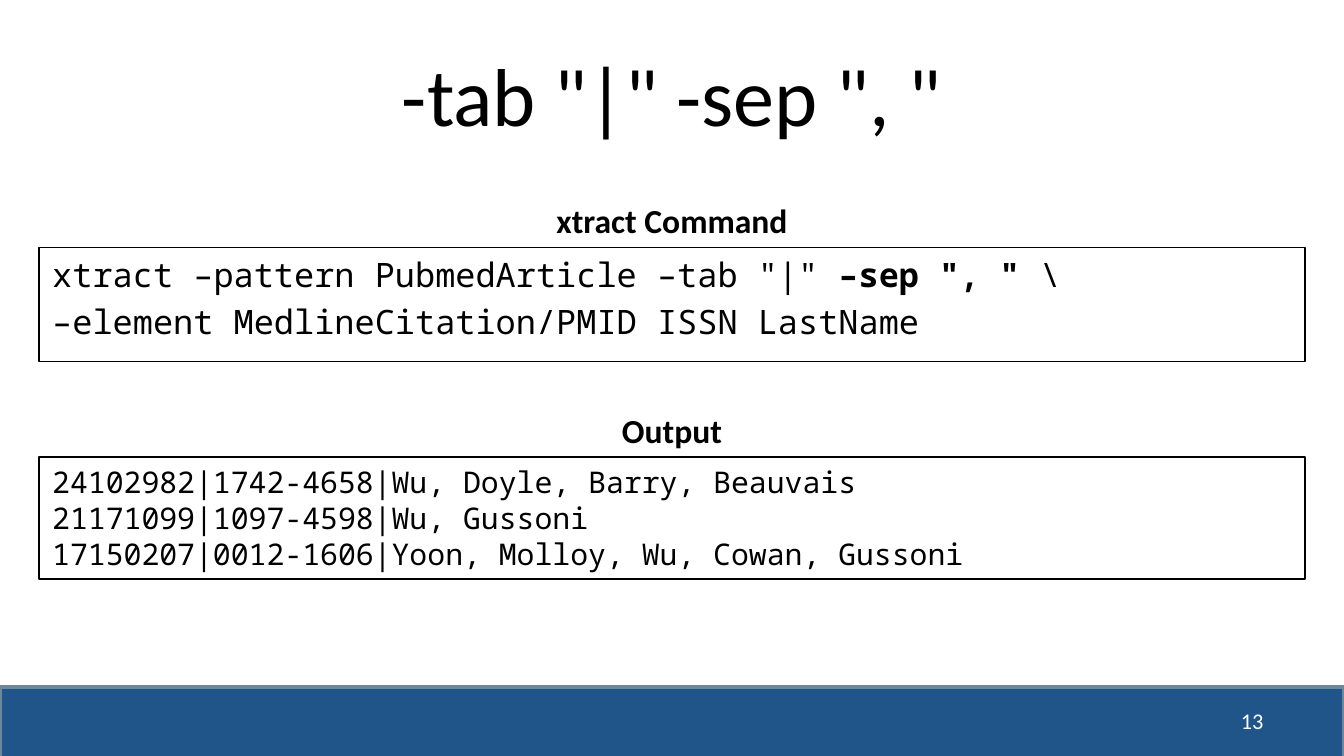
from dataclasses import dataclass

from pptx import Presentation
from pptx.dml.color import RGBColor
from pptx.enum.shapes import MSO_SHAPE
from pptx.enum.text import MSO_ANCHOR, PP_ALIGN
from pptx.util import Inches, Pt


@dataclass(frozen=True)
class Theme:
    ink: str = "000000"
    paper: str = "FFFFFF"
    band: str = "20558A"
    edge: str = "6D879B"
    sans: str = "Calibri"
    mono: str = "Noto Sans Mono"
    title: float = 44
    head: float = 18
    code: float = 18
    data: float = 16
    page: float = 12


THEME = Theme()


def style(font, size, face=THEME.sans, color=THEME.ink, bold=False):
    values = {"size": Pt(size), "name": face, "bold": bold}
    for key, value in values.items():
        setattr(font, key, value)
    font.color.rgb = RGBColor.from_string(color)


def write(frame, lines, align, anchor, gap=0, **look):
    """Fill a frame; each line is a list of (text, bold) runs."""
    values = {"word_wrap": True, "vertical_anchor": anchor}
    for key, value in values.items():
        setattr(frame, key, value)
    for i, runs in enumerate(lines):
        para = frame.paragraphs[0] if i == 0 else frame.add_paragraph()
        para.alignment = align
        if i and gap:
            para.space_before = Pt(gap)
        for text, bold in runs:
            run = para.add_run()
            run.text = text
            style(run.font, bold=bold, **look)


def add_rect(slide, box, fill, line, width):
    rect = slide.shapes.add_shape(MSO_SHAPE.RECTANGLE, *map(Inches, box))
    rect.shadow.inherit = False
    if fill:
        rect.fill.solid()
        rect.fill.fore_color.rgb = RGBColor.from_string(fill)
    else:
        rect.fill.background()
    rect.line.color.rgb = RGBColor.from_string(line)
    rect.line.width = Pt(width)
    return rect


def add_label(slide, box, text, align, anchor, bold=False, **look):
    label = slide.shapes.add_textbox(*map(Inches, box))
    write(label.text_frame, [[(text, bold)]], align, anchor, **look)


def add_title(slide, box, text):
    title = slide.shapes.title
    names = ("left", "top", "width", "height")
    for name, value in zip(names, box):
        setattr(title, name, Inches(value))
    write(title.text_frame, [[(text, False)]], PP_ALIGN.CENTER,
          MSO_ANCHOR.MIDDLE, size=THEME.title)


def add_panel(slide, box, head, lines, size, fill=None, gap=0):
    """A centred heading above a framed block of monospaced text."""
    left, top, width, height = box
    head_w, head_h = 2.09, 0.4
    frame = (left, top + head_h, width, height - head_h)
    rect = add_rect(slide, frame, fill, THEME.ink, 0.75)
    write(rect.text_frame, lines, PP_ALIGN.LEFT, MSO_ANCHOR.TOP,
          gap, size=size, face=THEME.mono)
    spot = (left + (width - head_w) / 2, top, head_w, head_h)
    add_label(slide, spot, head, PP_ALIGN.CENTER, MSO_ANCHOR.TOP,
              size=THEME.head, bold=True)


def add_footer(slide, box, page):
    left, top, width, _ = box
    add_rect(slide, box, THEME.band, THEME.edge, 2)
    spot = (left + width - 2.83, top + 0.1, 2.33, 0.3)
    add_label(slide, spot, page, PP_ALIGN.RIGHT, MSO_ANCHOR.MIDDLE,
              size=THEME.page, color=THEME.paper)


def main():
    # Widescreen, 16 to 9
    deck = Presentation()
    deck.slide_width = Inches(10)
    deck.slide_height = Inches(10 * 9 / 16)
    slide = deck.slides.add_slide(deck.slide_layouts.get_by_name("Title Only"))

    # Footer band and title
    add_footer(slide, (0, 5.11, 10, 0.58), "13")
    add_title(slide, (0.5, 0.23, 9, 0.94), '-tab "|" -sep ", "')

    # Command
    command = [
        [('xtract –pattern PubmedArticle –tab "|" ', False),
         ('–sep ", " ', True), ("\\", False)],
        [("–element MedlineCitation/PMID ISSN LastName", False)],
    ]
    add_panel(slide, (0.29, 1.44, 9.42, 1.25), "xtract Command",
              command, THEME.code, fill=THEME.paper, gap=3.6)

    # Its output
    rows = ["24102982|1742-4658|Wu, Doyle, Barry, Beauvais",
            "21171099|1097-4598|Wu, Gussoni",
            "17150207|0012-1606|Yoon, Molloy, Wu, Cowan, Gussoni"]
    add_panel(slide, (0.29, 3, 9.42, 1.31), "Output",
              [[(row, False)] for row in rows], THEME.data)

    deck.save("out.pptx")


if __name__ == "__main__":
    main()
